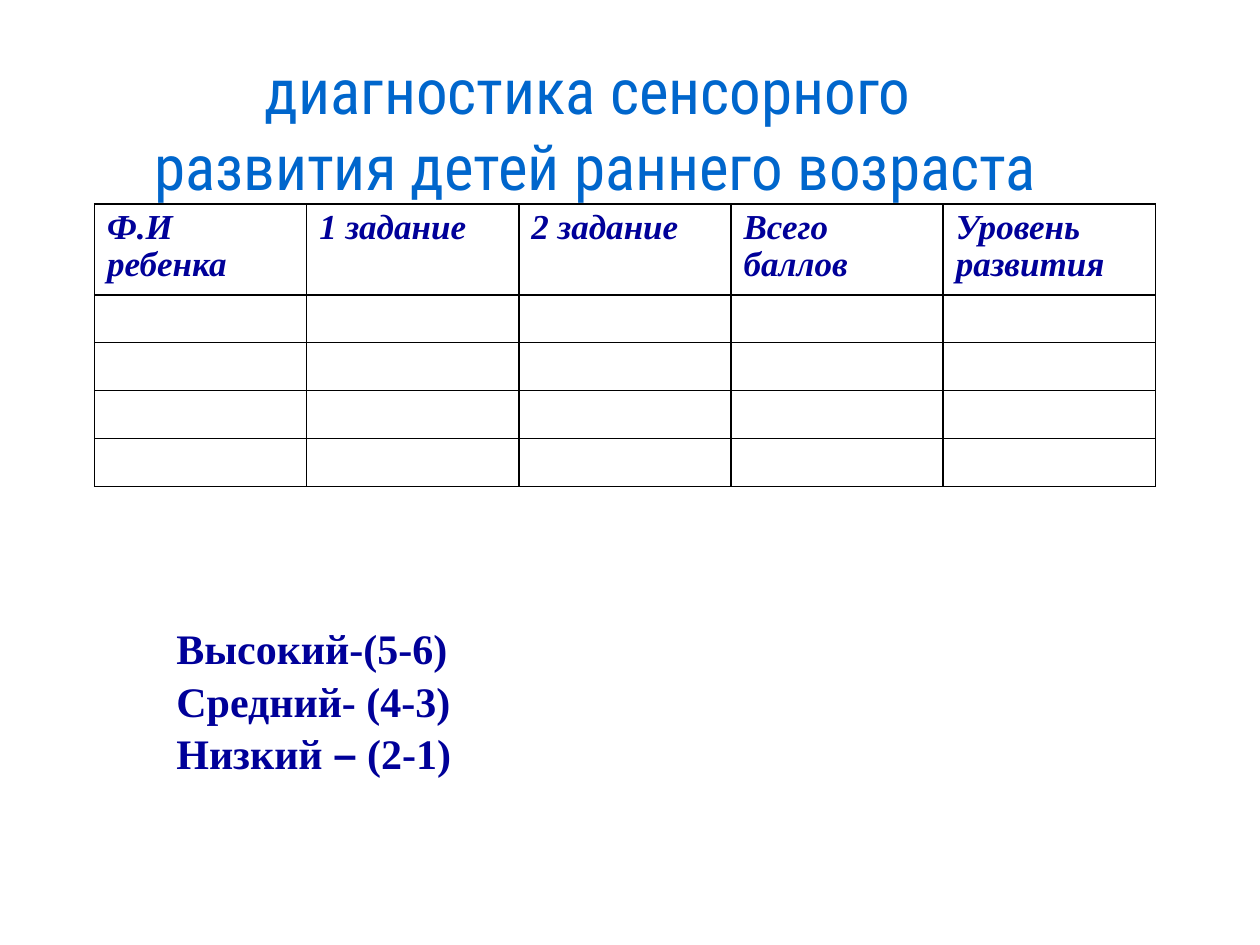
import pptx
import pptx.dml.color
import pptx.enum.text
import pptx.oxml
import pptx.oxml.ns
import pptx.util
from pptx.util import Inches

COLORS = {
    "title": "0066CC",
    "title_outline": "99CCFF",
    "text": "000099",
    "border": "000000",
}
SERIF = "Times New Roman"
TITLE_LINES = ["диагностика сенсорного ", "развития детей раннего возраста"]
HEADINGS = ["Ф.И ребенка", "1 задание", "2 задание", "Всего баллов", "Уровень развития"]
LEVELS = [["Высокий-(5-6)"], ["Средний- (4-3)"], ["Низкий ", "–", " (2-1)"]]
CHILD_ROWS = 4


def line_xml(tag, color, width):
    return pptx.oxml.parse_xml(
        f'<a:{tag} {pptx.oxml.ns.nsdecls("a")} w="{pptx.util.Pt(width)}">'
        f'<a:solidFill><a:srgbClr val="{color}"/></a:solidFill></a:{tag}>'
    )


def style_font(font, name, size, color, bold=False, italic=False):
    font.name = name
    font.size = pptx.util.Pt(size)
    font.color.rgb = pptx.dml.color.RGBColor.from_string(color)
    font.bold = bold
    font.italic = italic


def place(shape, left, top, width, height):
    shape.left, shape.top = Inches(left), Inches(top)
    shape.width, shape.height = Inches(width), Inches(height)


def fill_title(title):
    place(title, 0.51, 0.36, 8.43, 0.55)
    frame = title.text_frame
    frame.word_wrap = False
    frame.auto_size = pptx.enum.text.MSO_AUTO_SIZE.NONE
    frame.vertical_anchor = pptx.enum.text.MSO_ANCHOR.TOP
    frame.text = "\n".join(TITLE_LINES)
    for line in frame.paragraphs:
        line.alignment = pptx.enum.text.PP_ALIGN.CENTER
        style_font(line.font, "Roboto Condensed", 36, COLORS["title"])
        for run in line.runs:
            properties = run.font._element
            properties.insert(0, line_xml("ln", COLORS["title_outline"], 1.5))


def add_score_table(slide):
    heights = [0.72] + [0.38] * CHILD_ROWS
    width = 8.42
    scores = slide.shapes.add_table(
        len(heights), len(HEADINGS),
        Inches(0.75), Inches(1.62), Inches(width), Inches(sum(heights)),
    ).table
    scores.first_row = scores.horz_banding = False
    for column in scores.columns:
        column.width = Inches(width / len(HEADINGS))
    for row, height in zip(scores.rows, heights):
        row.height = Inches(height)

    # Open cells with a thin black grid
    for cell in scores.iter_cells():
        cell.fill.background()
        properties = cell._tc.get_or_add_tcPr()
        for position, side in enumerate(("lnL", "lnR", "lnT", "lnB")):
            properties.insert(position, line_xml(side, COLORS["border"], 1))
        style_font(cell.text_frame.paragraphs[0].font, SERIF, 14, COLORS["text"])

    # Column headings
    for cell, heading in zip(scores.rows[0].cells, HEADINGS):
        cell.text = heading
        label = cell.text_frame.paragraphs[0]
        label.line_spacing = 0.95
        style_font(label.font, SERIF, 20, COLORS["text"], bold=True, italic=True)


def fill_levels(levels):
    place(levels, 1.3, 4.9, 3.39, 1.3)
    frame = levels.text_frame
    frame.auto_size = pptx.enum.text.MSO_AUTO_SIZE.NONE
    frame.vertical_anchor = pptx.enum.text.MSO_ANCHOR.MIDDLE
    for index, parts in enumerate(LEVELS):
        level = frame.add_paragraph() if index else frame.paragraphs[0]
        level.space_before = pptx.util.Pt(0)
        level.line_spacing = 1.04
        style_font(level.font, SERIF, 24, COLORS["text"], bold=True)
        for part in parts:
            run = level.add_run()
            run.text = part
            if part == "–":
                run.font.name = "Arial"

        # No bullet and no hanging indent
        properties = level._p.get_or_add_pPr()
        properties.set("marL", "0")
        properties.set("indent", "0")
        no_bullet = pptx.oxml.parse_xml(f'<a:buNone {pptx.oxml.ns.nsdecls("a")}/>')
        properties.find(pptx.oxml.ns.qn("a:defRPr")).addprevious(no_bullet)


def main():
    deck = pptx.Presentation()
    deck.slide_width, deck.slide_height = Inches(10), Inches(7.5)
    slide = deck.slides.add_slide(deck.slide_layouts[1])
    fill_title(slide.shapes.title)
    add_score_table(slide)
    fill_levels(slide.placeholders[1])
    deck.save("out.pptx")


if __name__ == "__main__":
    main()
